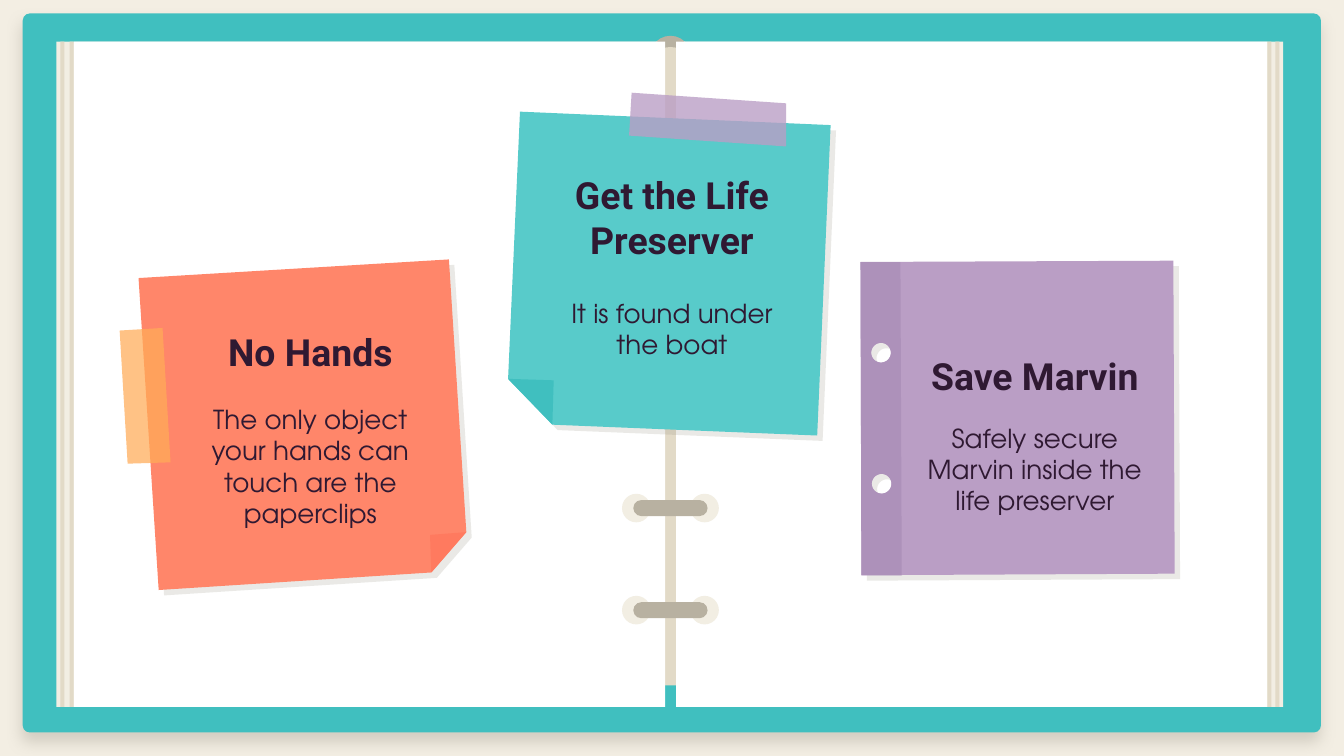
from math import cos, pi, sin

from lxml import etree
from pptx import Presentation
from pptx.dml.color import RGBColor
from pptx.enum.shapes import MSO_SHAPE
from pptx.enum.text import MSO_ANCHOR, PP_ALIGN
from pptx.oxml.ns import qn
from pptx.util import Pt

RECT, ROUNDED, OVAL = MSO_SHAPE.RECTANGLE, MSO_SHAPE.ROUNDED_RECTANGLE, MSO_SHAPE.OVAL
TOP, MIDDLE, CENTER = MSO_ANCHOR.TOP, MSO_ANCHOR.MIDDLE, PP_ALIGN.CENTER

CREAM = RGBColor(0xF3, 0xEE, 0xE3)
PAPER = RGBColor(0xF2, 0xEE, 0xE3)
BEIGE = RGBColor(0xE2, 0xDA, 0xC7)
METAL = RGBColor(0xB8, 0xB1, 0xA1)
SHADE = RGBColor(0x91, 0x8C, 0x7F)
WHITE = RGBColor(0xFF, 0xFF, 0xFF)
TEAL = RGBColor(0x40, 0xBF, 0xBF)
AQUA = RGBColor(0x58, 0xCB, 0xCA)
CORAL = RGBColor(0xFF, 0x86, 0x6A)
CORAL_FOLD = RGBColor(0xFF, 0x7A, 0x5F)
AMBER = RGBColor(0xFF, 0xAC, 0x58)
LILAC = RGBColor(0xBA, 0x9E, 0xC5)
LILAC_STRIP = RGBColor(0xAD, 0x91, 0xBA)
INK = RGBColor(0x2F, 0x19, 0x32)

# Notes: heading and body as (text, left, top, height);
# sheet, holes and details as points, details with colour and opacity
TEXT_WIDTH = 131
NOTES = [
    {
        "heading": ("No Hands", 100.8, 170.6, 35.3),
        "body": ("The only object your hands can touch are the paperclips", 100.8, 208.8, 54.7),
        "color": CORAL,
        "sheet": [(240.5, 139), (74.2, 149), (85, 316.1), (231.1, 306.7), (249.8, 285.1)],
        "holes": [],
        "details": [
            ([(249.8, 285.1), (230.4, 286.6), (231.1, 306.7)], CORAL_FOLD, 100),
            ([(87.1, 175.7), (64.1, 177.1), (68.4, 248.4), (91.4, 247.7)], AMBER, 73),
        ],
    },
    {
        "heading": ("Get the Life Preserver", 294.5, 98.6, 35.3),
        "body": ("It is found under the boat", 294.5, 151.9, 67),
        "color": AQUA,
        "sheet": [(278.6, 59.8), (272.2, 203), (295.9, 227.5), (437.8, 233.3), (445, 67)],
        "holes": [],
        "details": [
            ([(272.2, 203), (295.9, 227.5), (296.6, 203.8)], TEAL, 100),
            ([(338.4, 49.7), (337, 72.7), (421.2, 78.5), (421.2, 55.4)], LILAC, 79),
        ],
    },
    {
        "heading": ("Save Marvin", 488.9, 183.6, 35.3),
        "body": ("Safely secure Marvin inside the life preserver", 488.9, 218.9, 54.7),
        "color": LILAC,
        "sheet": [(461, 140.4), (461.5, 308.2), (629.3, 307.4), (628.6, 139.7)],
        "holes": [(472, 189), (472.3, 259.2)],
        "details": [
            ([(461, 140.4), (461.5, 308.2), (483.1, 308.2), (482.4, 140.4)], LILAC_STRIP, 100),
        ],
    },
]
HOLE_RADIUS = 5.3
NOTE_SHADOW = 2.9

# Notebook: left, width, colour of each full-height band
PAGE_TOP, PAGE_HEIGHT = 22.3, 356.4
PAGES = [(30.2, 322, PAPER), (366.5, 321, PAPER), (362.2, 316.8, WHITE), (39.6, 316.8, WHITE)]
PAGE_EDGES = [32.4, 37.4, 679, 683.3]
RING_CENTERS = [72.7, 119.5, 170.6, 221, 272.2, 326.9]
SPINE_CENTER = 359.2
RING_WIDTH, RING_HEIGHT = 39.8, 8.6
PUNCH_SIZE, PUNCH_OFFSET = 15.3, 18.3

prs = Presentation()
prs.slide_width, prs.slide_height = Pt(720), Pt(405)
slide = prs.slides.add_slide(prs.slide_layouts[6])
slide.background.fill.solid()
slide.background.fill.fore_color.rgb = CREAM


def paint(shape, color, opacity=100):
    shape.shadow.inherit = False
    shape.line.fill.background()
    shape.fill.solid()
    shape.fill.fore_color.rgb = color
    if opacity < 100:
        srgb = shape.element.spPr.find(".//" + qn("a:srgbClr"))
        etree.SubElement(srgb, qn("a:alpha"), val=str(opacity * 1000))
    return shape


def preset(kind, left, top, width, height, color):
    shape = slide.shapes.add_shape(kind, Pt(left), Pt(top), Pt(width), Pt(height))
    return paint(shape, color)


def outline(contours, color, opacity=100, shift=0):
    moved = [[(Pt(x + shift), Pt(y + shift)) for x, y in contour] for contour in contours]
    builder = slide.shapes.build_freeform(*moved[0][0], scale=1.0)
    builder.add_line_segments(moved[0][1:], close=True)
    for contour in moved[1:]:
        builder.move_to(*contour[0])
        builder.add_line_segments(contour[1:], close=True)
    paint(builder.convert_to_shape(), color, opacity)


def circle(x, y, steps=32):
    angles = [2 * pi * i / steps for i in range(steps)]
    return [(x + HOLE_RADIUS * cos(a), y + HOLE_RADIUS * sin(a)) for a in angles]


def write(content, size, font, bold, anchor):
    text, left, top, height = content
    box = slide.shapes.add_textbox(Pt(left), Pt(top), Pt(TEXT_WIDTH), Pt(height))
    frame = box.text_frame
    frame.word_wrap = True
    frame.vertical_anchor = anchor
    frame.margin_left = frame.margin_right = frame.margin_top = frame.margin_bottom = Pt(7.2)
    frame.text = text
    paragraph = frame.paragraphs[0]
    paragraph.alignment = CENTER
    style = paragraph.runs[0].font
    style.size, style.name, style.bold = Pt(size), font, bold
    style.color.rgb = INK


# Cover with its soft shadow
cover = preset(ROUNDED, 12.2, 7.2, 695.5, 385.2, TEAL)
cover.adjustments[0] = 0.01
effects = cover.element.spPr.find(qn("a:effectLst"))
glow = etree.SubElement(effects, qn("a:outerShdw"), blurRad=str(Pt(7.9)), dist=str(Pt(5.2)),
                        dir="5400000", algn="bl", rotWithShape="0")
glow_color = etree.SubElement(glow, qn("a:srgbClr"), val=str(SHADE))
etree.SubElement(glow_color, qn("a:alpha"), val="32000")

# Spine and pages
preset(RECT, 354.2, 37.4, 9.4, 329.8, BEIGE)
preset(OVAL, 348.2, 19.2, 22, 22, METAL)
preset(OVAL, 348.2, 25.2, 22, 19.4, BEIGE)
for left, width, color in PAGES:
    preset(RECT, left, PAGE_TOP, width, PAGE_HEIGHT, color)
for left in PAGE_EDGES:
    preset(RECT, left, PAGE_TOP, 2.1, PAGE_HEIGHT, BEIGE)

# Binder rings
for y in RING_CENTERS:
    for x in (SPINE_CENTER - PUNCH_OFFSET, SPINE_CENTER + PUNCH_OFFSET):
        preset(OVAL, x - PUNCH_SIZE / 2, y - PUNCH_SIZE / 2, PUNCH_SIZE, PUNCH_SIZE, PAPER)
    ring = preset(ROUNDED, SPINE_CENTER - RING_WIDTH / 2, y - RING_HEIGHT / 2,
                  RING_WIDTH, RING_HEIGHT, METAL)
    ring.adjustments[0] = 0.5

# Sticky notes
for note in NOTES:
    holes = [circle(x, y) for x, y in note["holes"]]
    outline([note["sheet"]] + holes, SHADE, 19, NOTE_SHADOW)
    outline([note["sheet"]] + holes, note["color"])
    for points, color, opacity in note["details"]:
        outline([points] + holes, color, opacity)
    write(note["heading"], 20, "Roboto", True, MIDDLE)
    write(note["body"], 14, "TeX Gyre Adventor", False, TOP)

prs.save("out.pptx")
